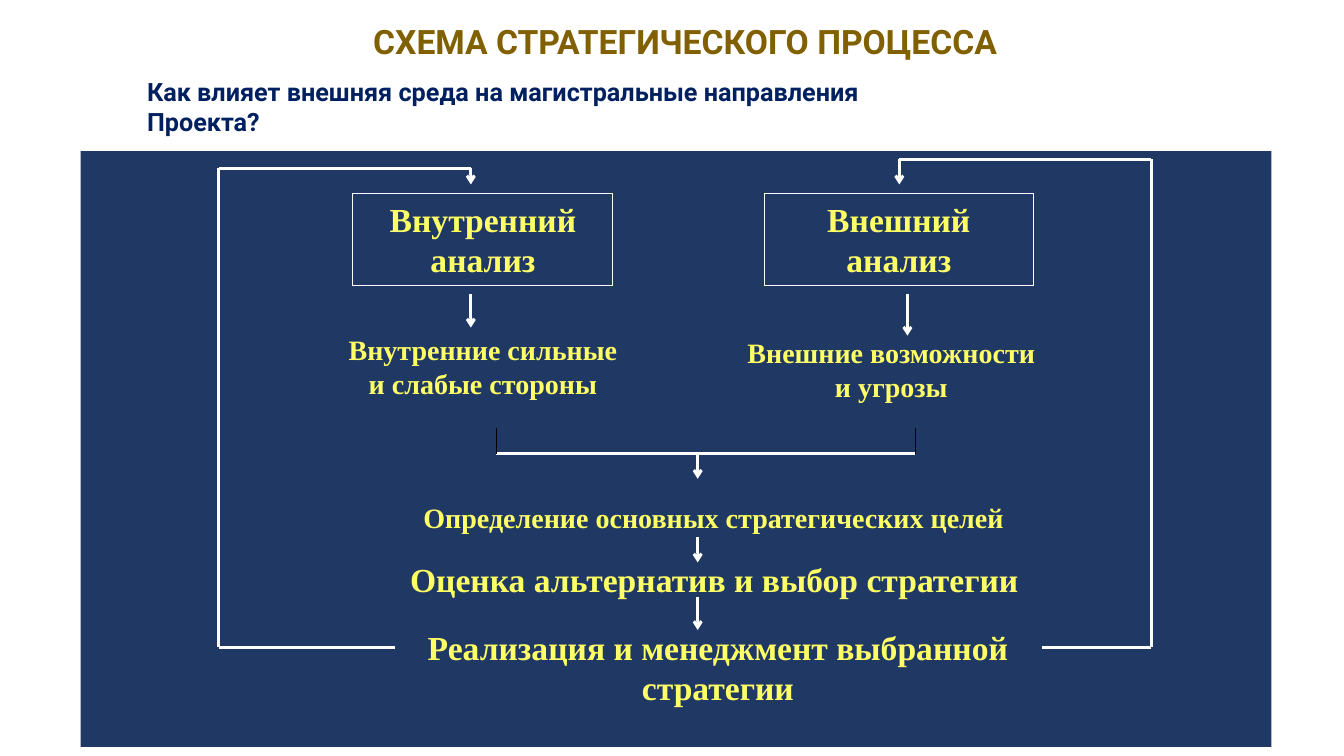
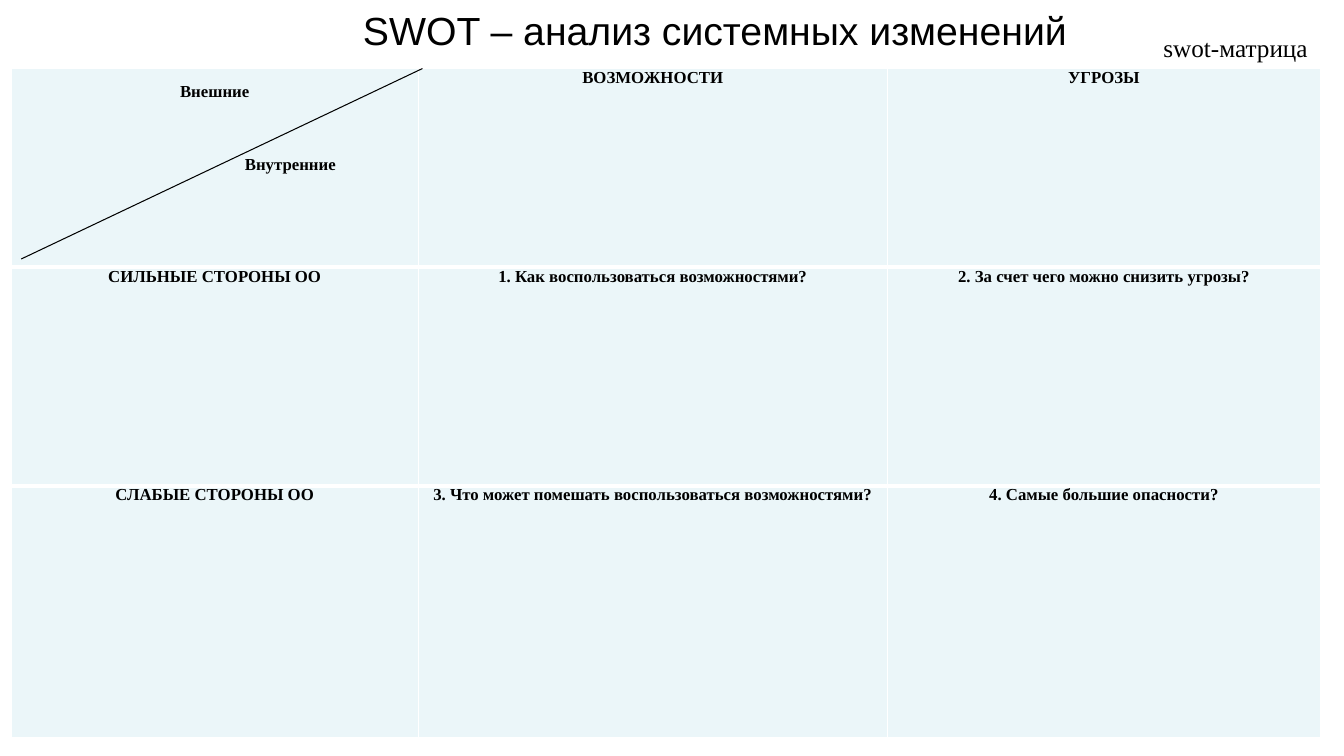
"""Build two slides: the strategic process scheme and the SWOT matrix."""
import dataclasses
import itertools

import lxml.etree
import pptx
import pptx.dml.color
import pptx.enum.shapes
import pptx.enum.text
import pptx.oxml.ns
import pptx.slide
import pptx.table
import pptx.text.text
import pptx.util

Inches = pptx.util.Inches
Pt = pptx.util.Pt
RGBColor = pptx.dml.color.RGBColor
Align = pptx.enum.text.PP_ALIGN
Anchor = pptx.enum.text.MSO_ANCHOR
Shape = pptx.enum.shapes.MSO_SHAPE
Slide = pptx.slide.Slide
qn = pptx.oxml.ns.qn

WHITE = RGBColor(0xFF, 0xFF, 0xFF)
BLACK = RGBColor(0, 0, 0)
NAVY = RGBColor(0x20, 0x38, 0x64)
BLUE = RGBColor(0x00, 0x20, 0x60)
GOLD = RGBColor(0x80, 0x60, 0x00)
YELLOW = RGBColor(0xFF, 0xFF, 0x66)
PALE = RGBColor(0xEB, 0xF6, 0xF9)
SERIF = "Times New Roman"


@dataclasses.dataclass(frozen=True)
class Font:
    size: float
    color: RGBColor
    name: str = SERIF
    bold: bool = True


@dataclasses.dataclass(frozen=True)
class Box:
    left: float
    top: float
    width: float
    height: float

    def spans(self) -> list[int]:
        return [Inches(v) for v in dataclasses.astuple(self)]


@dataclasses.dataclass(frozen=True)
class Label:
    text: str
    box: Box
    size: float
    framed: bool = False


@dataclasses.dataclass(frozen=True)
class Route:
    points: tuple[tuple[float, float], ...]
    arrow: bool = True
    color: RGBColor = WHITE
    width: float = 2


LABELS = (
    Label("Внутренний анализ", Box(3.5, 1.92, 2.58, 0.91), 24, True),
    Label("Внешний анализ", Box(7.58, 1.92, 2.67, 0.91), 24, True),
    Label("Внутренние сильные и слабые стороны", Box(3.33, 3.25, 2.92, 0.77), 20),
    Label("Внешние возможности и угрозы", Box(7.3, 3.28, 3.08, 0.77), 20),
    Label("Определение основных стратегических целей", Box(3.83, 4.92, 6.5, 0.43), 20),
    Label("Оценка альтернатив и выбор стратегии", Box(3.75, 5.5, 6.67, 0.5), 24),
    Label("Реализация и менеджмент выбранной стратегии", Box(3.58, 6.17, 7.08, 0.91), 24),
)
ROUTES = (
    Route(((4.92, 4.5), (9.08, 4.5)), arrow=False),
    Route(((4.92, 4.25), (4.92, 4.5)), False, BLACK, 0.75),
    Route(((9.08, 4.25), (9.08, 4.5)), False, BLACK, 0.75),
    Route(((6.92, 4.5), (6.92, 4.75))),
    Route(((6.92, 5.33), (6.92, 5.58))),
    Route(((6.92, 5.92), (6.92, 6.25))),
    Route(((4.67, 2.92), (4.67, 3.25))),
    Route(((9, 2.92), (9, 3.33))),
    Route(((3.92, 6.42), (2.17, 6.42), (2.17, 1.67), (4.67, 1.67), (4.67, 1.83))),
    Route(((10.33, 6.42), (11.42, 6.42), (11.42, 1.58), (8.92, 1.58), (8.92, 1.83))),
)
COLS = (4.04, 4.65, 4.3)
ROWS = (1.97, 2.17, 2.5)
CELLS = (
    ("Внешние", "ВОЗМОЖНОСТИ", "УГРОЗЫ"),
    ("СИЛЬНЫЕ СТОРОНЫ ОО", "1. Как воспользоваться возможностями?",
     "2. За счет чего можно снизить угрозы?"),
    ("СЛАБЫЕ СТОРОНЫ ОО", "3. Что может помешать воспользоваться возможностями?",
     "4. Самые большие опасности?"),
)
CELL_FONT = Font(12, BLACK)


def add_run(para: pptx.text.text._Paragraph, text: str, font: Font) -> None:
    run = para.add_run()
    run.text = text
    run.font.size = Pt(font.size)
    run.font.name = font.name
    run.font.bold = font.bold
    run.font.color.rgb = font.color


def write(frame: pptx.text.text.TextFrame, text: str, font: Font,
          align: Align = Align.LEFT, anchor: Anchor = Anchor.TOP, wrap: bool = True) -> None:
    frame.word_wrap = wrap
    frame.auto_size = pptx.enum.text.MSO_AUTO_SIZE.NONE
    frame.vertical_anchor = anchor
    para = frame.paragraphs[0]
    para.alignment = align
    for row, line in enumerate(text.split("\n")):
        if row:
            para.add_line_break()
        add_run(para, line, font)


def add_title(slide: Slide, text: str, box: Box, font: Font,
              align: Align, anchor: Anchor) -> None:
    title = slide.shapes.title
    title.left, title.top, title.width, title.height = box.spans()
    write(title.text_frame, text, font, align, anchor)
    title.text_frame.paragraphs[0].line_spacing = 0.9 if anchor == Anchor.MIDDLE else 1.0


def add_note(slide: Slide, text: str, box: Box, font: Font) -> None:
    note = slide.shapes.add_textbox(*box.spans())
    write(note.text_frame, text, font, wrap=False)


def add_label(slide: Slide, label: Label) -> None:
    spans = label.box.spans()
    if label.framed:
        shape = slide.shapes.add_shape(Shape.RECTANGLE, *spans)
        shape.shadow.inherit = False
        shape.fill.background()
        shape.line.color.rgb = WHITE
        shape.line.width = Pt(0.75)
    else:
        shape = slide.shapes.add_textbox(*spans)
    write(shape.text_frame, label.text, Font(label.size, YELLOW), Align.CENTER)


def add_route(slide: Slide, route: Route) -> None:
    for start, end in itertools.pairwise(route.points):
        wire = slide.shapes.add_connector(
            pptx.enum.shapes.MSO_CONNECTOR.STRAIGHT, *map(Inches, start + end))
        wire.line.color.rgb = route.color
        wire.line.width = Pt(route.width)
        props = wire.element.spPr
        if route.arrow and end == route.points[-1]:
            lxml.etree.SubElement(props.find(qn("a:ln")), qn("a:tailEnd"), type="arrow")
        lxml.etree.SubElement(props, qn("a:effectLst"))


def set_edge(cell: pptx.table._Cell, side: str, width: float) -> None:
    props = cell._tc.get_or_add_tcPr()
    edge = lxml.etree.SubElement(props, qn(f"a:ln{side}"), w=str(Pt(width)))
    fill = lxml.etree.SubElement(edge, qn("a:solidFill"))
    lxml.etree.SubElement(fill, qn("a:srgbClr"), val=str(WHITE))


def fill_cell(cell: pptx.table._Cell, text: str, row: int) -> None:
    cell.margin_left = cell.margin_right = Inches(0.06)
    cell.margin_top = cell.margin_bottom = 0
    last = len(ROWS) - 1
    for side, thick in (("L", False), ("R", False), ("T", row > 0), ("B", row < last)):
        set_edge(cell, side, 3 if thick else 1)
    cell.fill.solid()
    cell.fill.fore_color.rgb = PALE
    para = cell.text_frame.paragraphs[0]
    para.alignment = Align.CENTER
    add_run(para, text, CELL_FONT)


def add_matrix(slide: Slide) -> None:
    box = Box(0.11, 0.68, sum(COLS), sum(ROWS))
    table = slide.shapes.add_table(len(ROWS), len(COLS), *box.spans()).table
    table.first_row = table.horz_banding = False
    for col, width in zip(table.columns, COLS):
        col.width = Inches(width)
    for row, height in zip(table.rows, ROWS):
        row.height = Inches(height)
    for row, texts in enumerate(CELLS):
        for col, text in enumerate(texts):
            fill_cell(table.cell(row, col), text, row)
    corner = table.cell(0, 0)
    corner.margin_top = Inches(0.14)
    inner = corner.text_frame.add_paragraph()
    inner.alignment = Align.CENTER
    inner.space_before = Pt(39)
    inner._p.get_or_add_pPr().set("marL", str(Inches(1.5)))
    add_run(inner, "Внутренние", CELL_FONT)


def draw_scheme(slide: Slide) -> None:
    panel = slide.shapes.add_shape(Shape.RECTANGLE, *Box(0.8, 1.5, 11.81, 5.91).spans())
    panel.shadow.inherit = False
    panel.fill.solid()
    panel.fill.fore_color.rgb = NAVY
    panel.line.fill.background()
    add_title(slide, "СХЕМА СТРАТЕГИЧЕСКОГО ПРОЦЕССА", Box(2.67, 0, 8.25, 0.87),
              Font(24, GOLD, "Roboto"), Align.CENTER, Anchor.MIDDLE)
    for label in LABELS:
        add_label(slide, label)
    for route in ROUTES:
        add_route(slide, route)
    add_note(slide, "Как влияет внешняя среда на магистральные направления\nПроекта?",
             Box(1.36, 0.71, 7.88, 0.7), Font(18, BLUE, "Roboto"))


def draw_swot(slide: Slide) -> None:
    add_matrix(slide)
    add_route(slide, Route(((0.21, 2.57), (4.19, 0.68)), False, BLACK, 0.75))
    add_title(slide, "SWOT – анализ системных изменений", Box(3.5, 0.01, 7.26, 0.57),
              Font(28, BLACK, "Arial", False), Align.LEFT, Anchor.TOP)
    add_note(slide, "swot-матрица", Box(11.44, 0.27, 1.69, 0.4),
             Font(18, BLACK, bold=False))


def main() -> None:
    deck = pptx.Presentation()
    deck.slide_width, deck.slide_height = Inches(13.33), Inches(7.5)
    for draw in (draw_scheme, draw_swot):
        draw(deck.slides.add_slide(deck.slide_layouts[5]))
    deck.save("out.pptx")


if __name__ == "__main__":
    main()
